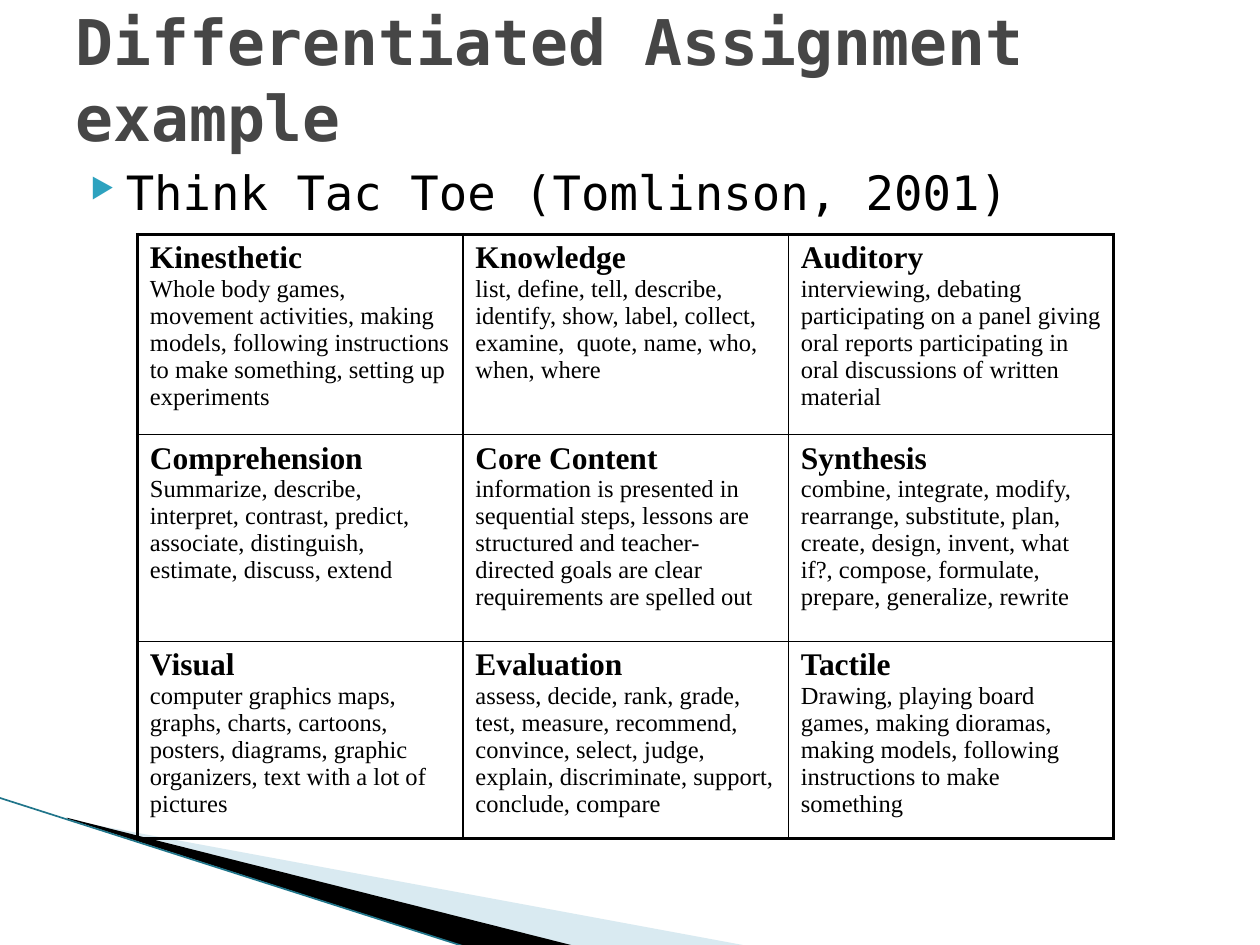
"""Build the Think Tac Toe differentiated assignment slide."""
from lxml import etree
from pptx import Presentation
from pptx.dml.color import RGBColor
from pptx.enum.shapes import MSO_CONNECTOR
from pptx.enum.text import MSO_ANCHOR
from pptx.oxml.ns import qn
from pptx.util import Inches, Pt

STRAIGHT = MSO_CONNECTOR.STRAIGHT
TOP, MIDDLE = MSO_ANCHOR.TOP, MSO_ANCHOR.MIDDLE
BLACK = RGBColor(0x00, 0x00, 0x00)
TITLE_GRAY = RGBColor(0x46, 0x46, 0x46)
BULLET_TEAL = RGBColor(0x2D, 0xA2, 0xBF)
PALE_BLUE = RGBColor(0xA0, 0xCB, 0xDC)
EDGE_TEAL = RGBColor(0x20, 0x75, 0x8A)
HEADING_FONT = "DejaVu Sans Mono"
TABLE_FONT = "Times New Roman"

TABLE_WIDTH = 7.75
ROW_HEIGHTS = [1.59, 1.64, 1.49]
CHOICES = [
    [
        ("Kinesthetic", "Whole body games, movement activities, making models, "
         "following instructions to make something, setting up experiments"),
        ("Knowledge", "list, define, tell, describe, identify, show, label, "
         "collect, examine,  quote, name, who, when, where"),
        ("Auditory", "interviewing, debating participating on a panel giving "
         "oral reports participating in oral discussions of written material"),
    ],
    [
        ("Comprehension", "Summarize, describe,", "interpret, contrast, predict, "
         "associate, distinguish, estimate, discuss, extend"),
        ("Core Content", "information is presented in sequential steps, lessons "
         "are structured and teacher-directed goals are clear requirements are "
         "spelled out"),
        ("Synthesis", "combine, integrate, modify, rearrange, substitute, plan, "
         "create, design, invent, what if?, compose, formulate, prepare, "
         "generalize, rewrite"),
    ],
    [
        ("Visual", "computer graphics maps, graphs, charts, cartoons, posters, "
         "diagrams, graphic organizers, text with a lot of pictures"),
        ("Evaluation", "assess, decide, rank, grade, test, measure, recommend, "
         "convince, select, judge, explain, discriminate, support, conclude, "
         "compare"),
        ("Tactile", "Drawing, playing board games, making dioramas, making "
         "models, following instructions to make something"),
    ],
]


def write_text(paragraph, text, *, size, font=TABLE_FONT, color=BLACK, bold=False):
    """Add one formatted run to a paragraph."""
    run = paragraph.add_run()
    run.text = text
    run.font.name = font
    run.font.size = Pt(size)
    run.font.bold = bold
    run.font.color.rgb = color


def add_text_box(slide, left, top, width, height, *, anchor=TOP,
                 bottom_margin=0.05):
    """Add a wrapping text box and return its first paragraph."""
    shape = slide.shapes.add_textbox(
        Inches(left), Inches(top), Inches(width), Inches(height))
    frame = shape.text_frame
    frame.word_wrap = True
    frame.vertical_anchor = anchor
    frame.margin_bottom = Inches(bottom_margin)
    return frame.paragraphs[0]


def add_bullet(paragraph, character, *, color, percent, margin, indent):
    """Give a paragraph a coloured bullet and a hanging indent."""
    properties = paragraph._p.get_or_add_pPr()
    properties.set("marL", str(Inches(margin)))
    properties.set("indent", str(Inches(indent)))
    bullet_color = etree.SubElement(properties, qn("a:buClr"))
    etree.SubElement(bullet_color, qn("a:srgbClr"), val=str(color))
    etree.SubElement(properties, qn("a:buSzPct"), val=str(percent * 1000))
    etree.SubElement(properties, qn("a:buChar"), char=character)


def add_wedge(slide, points, color, opacity=100):
    """Draw a filled polygon through points given in inches."""
    start, *others = [(Inches(x), Inches(y)) for x, y in points]
    builder = slide.shapes.build_freeform(*start)
    builder.add_line_segments(others, close=True)
    shape = builder.convert_to_shape()
    shape.shadow.inherit = False
    shape.line.fill.background()
    shape.fill.solid()
    shape.fill.fore_color.rgb = color
    if opacity < 100:
        fill_color = shape._element.spPr.find(".//" + qn("a:srgbClr"))
        etree.SubElement(fill_color, qn("a:alpha"), val=str(opacity * 1000))


def add_line(slide, start, end, color, width):
    """Draw a straight line between two points given in inches."""
    line = slide.shapes.add_connector(
        STRAIGHT, *[Inches(value) for value in (*start, *end)])
    line.line.color.rgb = color
    line.line.width = Pt(width)
    etree.SubElement(line._element.spPr, qn("a:effectLst"))


def set_borders(cell, widths):
    """Set black cell borders, in points, for left, right, top and bottom."""
    properties = cell._tc.get_or_add_tcPr()
    for side, width in zip("LRTB", widths):
        border = etree.SubElement(
            properties, qn(f"a:ln{side}"), w=str(Pt(width)))
        fill = etree.SubElement(border, qn("a:solidFill"))
        etree.SubElement(fill, qn("a:srgbClr"), val=str(BLACK))


def fill_cell(cell, texts):
    """Write a bold heading and its activities into a cell."""
    frame = cell.text_frame
    for index, text in enumerate(texts):
        paragraph = frame.add_paragraph() if index else frame.paragraphs[0]
        write_text(paragraph, text, size=14 if index else 18, bold=not index)


def add_choice_table(slide, left, top):
    """Add the choice grid with a heavier outer border."""
    rows, columns = len(CHOICES), len(CHOICES[0])
    table = slide.shapes.add_table(
        rows, columns, Inches(left), Inches(top),
        Inches(TABLE_WIDTH), Inches(sum(ROW_HEIGHTS))).table
    table.first_row = False
    table.horz_banding = False
    for row_index, (height, choices) in enumerate(zip(ROW_HEIGHTS, CHOICES)):
        table.rows[row_index].height = Inches(height)
        for column_index, texts in enumerate(choices):
            cell = table.cell(row_index, column_index)
            outer = (column_index == 0, column_index == columns - 1,
                     row_index == 0, row_index == rows - 1)
            set_borders(cell, [2 if edge else 1 for edge in outer])
            cell.fill.background()
            fill_cell(cell, texts)


def main():
    """Build and save the slide."""
    presentation = Presentation()
    presentation.slide_width = Inches(10)
    presentation.slide_height = Inches(7.5)
    slide = presentation.slides.add_slide(presentation.slide_layouts[6])

    add_wedge(slide, [(0.55, 6.51), (5.95, 7.51), (4.56, 7.51), (0.55, 6.5)],
              PALE_BLUE, opacity=40)
    add_wedge(slide, [(0.53, 6.49), (4.57, 7.51), (3.72, 7.52), (0.54, 6.5)],
              BLACK)
    add_line(slide, (-0.01, 6.33), (3.71, 7.52), EDGE_TEAL, 0.95)

    subtitle = add_text_box(slide, 0.5, 1.25, 9, 5.32)
    add_bullet(subtitle, "▶", color=BULLET_TEAL, percent=58,
               margin=0.4, indent=-0.28)
    write_text(subtitle, "Think Tac Toe (Tomlinson, 2001)", size=27,
               font=HEADING_FONT)

    title = add_text_box(slide, 0.5, 0.3, 9, 1.25, anchor=MIDDLE,
                         bottom_margin=0.66)
    write_text(title, "Differentiated Assignment example", size=36,
               font=HEADING_FONT, color=TITLE_GRAY, bold=True)

    add_choice_table(slide, 1.09, 1.86)
    presentation.save("out.pptx")


if __name__ == "__main__":
    main()
